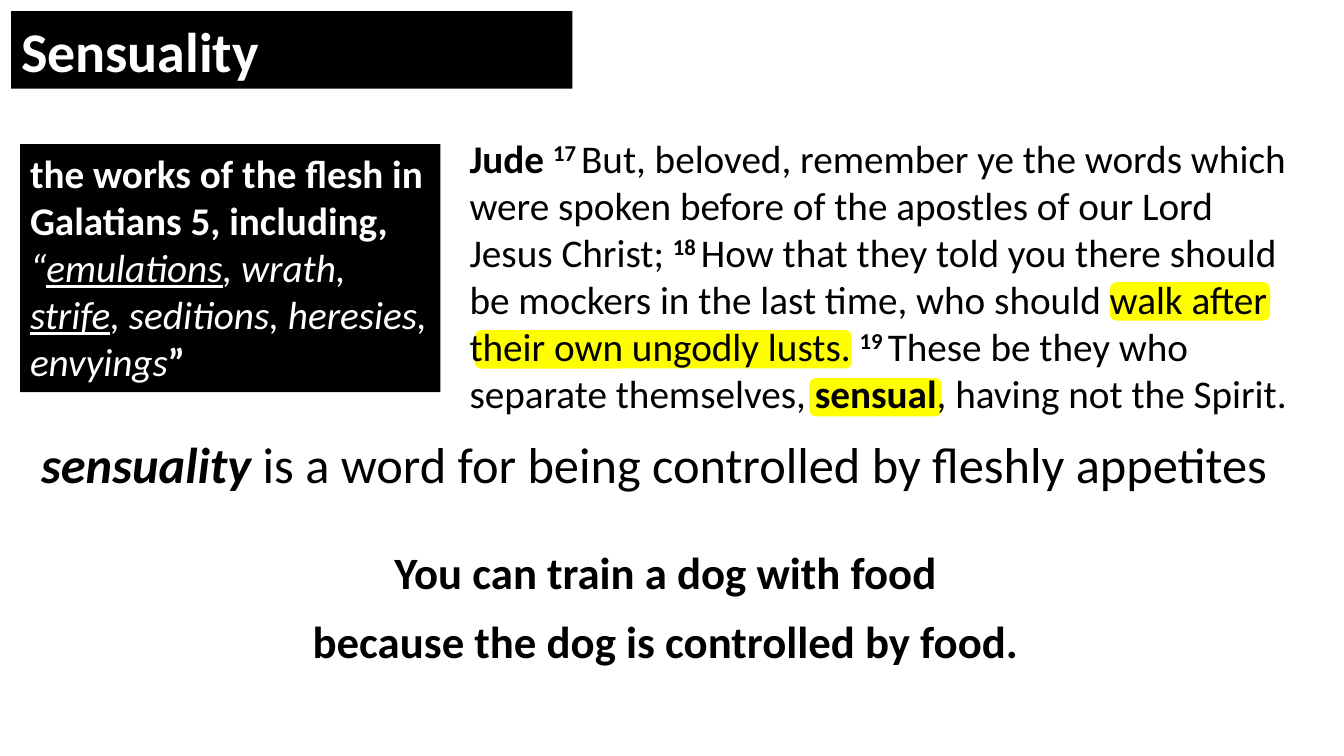
"""Builds the Sensuality scripture slide."""
from pptx import Presentation
from pptx.dml.color import RGBColor
from pptx.enum.shapes import MSO_SHAPE
from pptx.enum.text import MSO_ANCHOR, MSO_AUTO_SIZE, PP_ALIGN
from pptx.util import Pt

BLACK = RGBColor(0x00, 0x00, 0x00)
WHITE = RGBColor(0xFF, 0xFF, 0xFF)
YELLOW = RGBColor(0xFF, 0xFF, 0x00)
RECT, ROUNDED = MSO_SHAPE.RECTANGLE, MSO_SHAPE.ROUNDED_RECTANGLE
LEFT, CENTER = PP_ALIGN.LEFT, PP_ALIGN.CENTER
TOP, GROW = MSO_ANCHOR.TOP, MSO_AUTO_SIZE.SHAPE_TO_FIT_TEXT

BOLD = {"bold": True}
ITALIC = {"italic": True}
UNDERLINED = {"italic": True, "underline": True}
VERSE = {"bold": True, "superscript": True}
SPACED = {"line_spacing": 1.07, "space_after": Pt(8)}


class SlideBuilder:
    """Holds the text style and the current slide."""

    def __init__(self, slide, font="Calibri"):
        self.slide = slide
        self.font = font

    def block(self, kind, box, color):
        shape = self.slide.shapes.add_shape(kind, *map(Pt, box))
        shape.shadow.inherit = False
        shape.fill.solid()
        shape.fill.fore_color.rgb = color
        shape.line.fill.background()
        return shape

    def panel(self, box, paragraphs, size):
        self.fill_text(self.block(RECT, box, BLACK), paragraphs, size, WHITE)

    def text(self, box, paragraphs, size, align=LEFT, spacing=None):
        holder = self.slide.shapes.add_textbox(*map(Pt, box))
        self.fill_text(holder, paragraphs, size, BLACK, align, spacing)

    def fill_text(self, holder, paragraphs, size, color, align=LEFT, spacing=None):
        frame = holder.text_frame
        for name, value in {"word_wrap": True, "auto_size": GROW,
                            "vertical_anchor": TOP}.items():
            setattr(frame, name, value)
        for index, phrases in enumerate(paragraphs):
            paragraph = frame.add_paragraph() if index else frame.paragraphs[0]
            for name, value in {"alignment": align, **(spacing or {})}.items():
                setattr(paragraph, name, value)
            for words, style in phrases:
                self.add_phrase(paragraph, words, style, size, color)

    def add_phrase(self, paragraph, words, style, size, color):
        phrase = paragraph.add_run()
        phrase.text = words
        phrase.font.color.rgb = color
        values = {"name": self.font, "size": Pt(size), "bold": False, **style}
        if values.pop("superscript", False):
            phrase._r.get_or_add_rPr().set("baseline", "30000")
        for name, value in values.items():
            setattr(phrase.font, name, value)


def main():
    deck = Presentation()
    deck.slide_width, deck.slide_height = Pt(960), Pt(540)
    builder = SlideBuilder(deck.slides.add_slide(deck.slide_layouts[6]))

    verse_line = 34.2
    highlights = [(578.2, 94.3), (339.1, 269.3), (792.7, 114.5)]
    for lines_up, (left, width) in enumerate(highlights):
        builder.block(ROUNDED, (left, 270 - lines_up * verse_line, width, 27.4), YELLOW)

    builder.panel((8, 8, 401, 55.4), [[("Sensuality", BOLD)]], 40)
    builder.text((22.3, 303.1, 907.2, 51.8), [[
        ("sensuality", {**BOLD, **ITALIC}),
        (" is a word for being controlled by fleshly appetites", {}),
    ]], 36, spacing=SPACED)
    builder.text((328.3, 92.2, 609.8, 211), [[
        ("Jude ", BOLD),
        ("17 ", VERSE),
        ("But, beloved, remember ye the words which were spoken before "
         "of the apostles of our Lord Jesus Christ; ", {}),
        ("18 ", VERSE),
        ("How that they told you there should be mockers in the last time, "
         "who should walk after their own ungodly lusts. ", {}),
        ("19 ", VERSE),
        ("These be they who separate themselves, ", {}),
        ("sensual", BOLD),
        (", having not the Spirit.", {}),
    ]], 28)
    builder.panel((14.4, 103, 300.2, 177.1), [[
        ("the works of the flesh in Galatians 5, including, ", BOLD),
        ("“", ITALIC),
        ("emulations", UNDERLINED),
        (", wrath, ", ITALIC),
        ("strife", UNDERLINED),
        (", seditions, heresies, envyings", ITALIC),
        ("”", BOLD),
    ]], 28)
    builder.text((208.8, 383, 533.5, 96.5), [
        [("You can train a dog with food", BOLD)],
        [("because the dog is controlled by food.", BOLD)],
    ], 32, CENTER, SPACED)

    deck.save("out.pptx")


if __name__ == "__main__":
    main()
